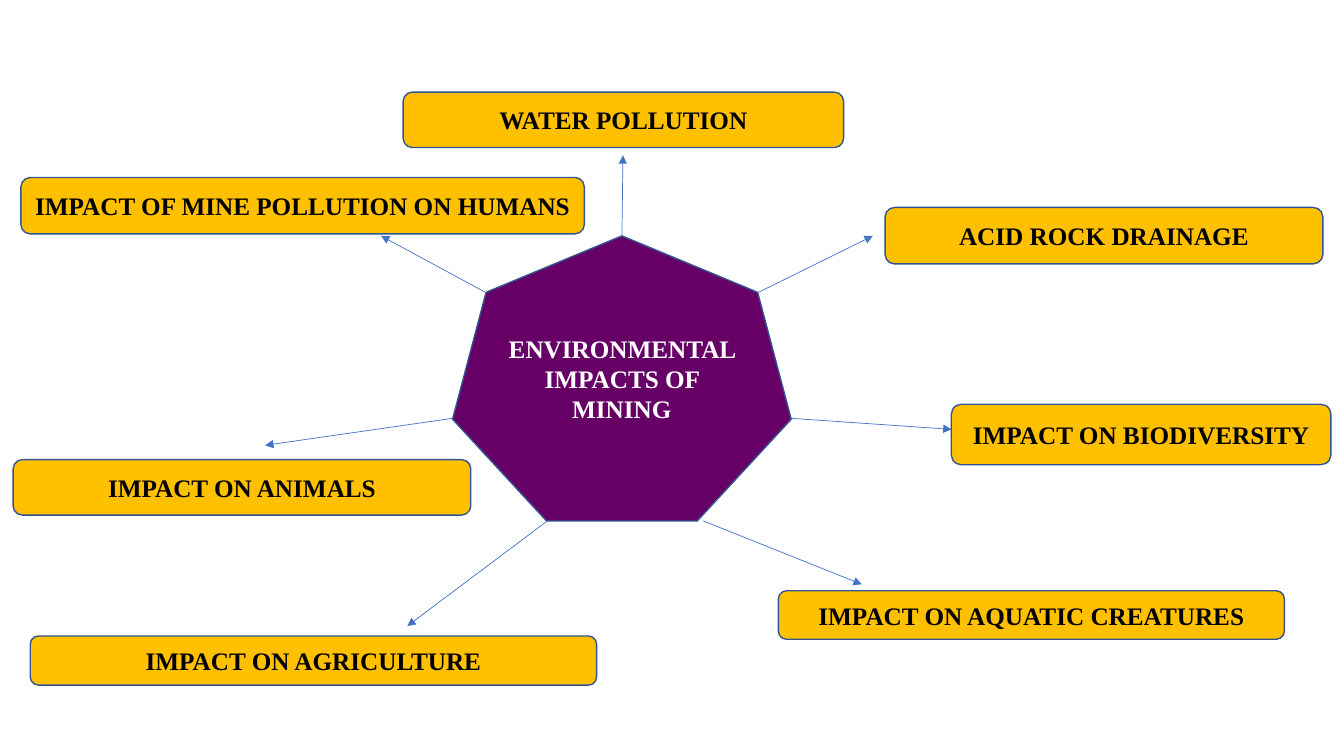
from lxml.etree import SubElement
from pptx import Presentation
from pptx.dml.color import RGBColor
from pptx.enum.shapes import MSO_CONNECTOR as Connector, MSO_SHAPE as Shape
from pptx.enum.text import MSO_ANCHOR as Anchor, PP_ALIGN as Align
from pptx.oxml.ns import qn
from pptx.util import Pt

COLORS = {
    "hub": "660066",
    "label": "FFC000",
    "outline": "325491",
    "arrow": "4472C4",
    "hub_text": "FFFFFF",
    "label_text": "000000",
}
FONT = "Times New Roman"
HUB_BOX = (323.3, 168.5, 241.9, 203.6)

# Each impact: wording, label box, arrow start as a share of the hub, arrow tip.
IMPACTS = [
    ("WATER POLLUTION", (288, 65.8, 314.6, 39.6), (0.5, 0), (445, 111)),
    ("ACID ROCK DRAINAGE", (632.2, 148.2, 312.7, 40.3), (0.9, 0.2), (623.5, 168.5)),
    ("IMPACT ON BIODIVERSITY", (679.5, 288.8, 271.2, 43.2), (1, 0.64), (679.7, 306.7)),
    ("IMPACT ON AQUATIC CREATURES", (556, 422, 361.4, 34.6), (0.74, 1), (615.6, 417.4)),
    ("IMPACT ON AGRICULTURE", (21.6, 454.3, 404.6, 35.1), (0.28, 1), (290.9, 447.2)),
    ("IMPACT ON ANIMALS", (9.4, 328.3, 326.9, 39.6), (0, 0.64), (189.4, 318.1)),
    ("IMPACT OF MINE POLLUTION ON HUMANS", (14.9, 126.8, 402.5, 40.3), (0.1, 0.2), (272.2, 168.5)),
]


def color(name):
    """Return the named palette colour."""
    return RGBColor.from_string(COLORS[name])


def add_topic(slide, outline, box, wording, role):
    """Place one filled shape with centred bold wording in its box."""
    topic = slide.shapes.add_shape(outline, *map(Pt, box))
    topic.shadow.inherit = False
    topic.fill.solid()
    topic.fill.fore_color.rgb = color(role)
    topic.line.color.rgb = color("outline")
    topic.line.width = Pt(1)
    frame = topic.text_frame
    frame.word_wrap = True
    frame.vertical_anchor = Anchor.MIDDLE
    paragraph = frame.paragraphs[0]
    paragraph.alignment = Align.CENTER
    run = paragraph.add_run()
    run.text = wording
    run.font.name = FONT
    run.font.size = Pt(18)
    run.font.bold = True
    run.font.color.rgb = color(f"{role}_text")


def add_spoke(slide, hub_box, share, tip):
    """Draw an arrow from a point on the hub to its tip."""
    left, top, width, height = hub_box
    start = (left + share[0] * width, top + share[1] * height)
    spoke = slide.shapes.add_connector(Connector.STRAIGHT, *map(Pt, start + tip))
    spoke.line.color.rgb = color("arrow")
    spoke.line.width = Pt(0.5)
    SubElement(spoke.line._get_or_add_ln(), qn("a:tailEnd"), type="triangle")
    SubElement(spoke._element.spPr, qn("a:effectLst"))


def add_impact_map(slide, hub_box):
    """Build the hub, its arrows and the labels around it."""
    add_topic(slide, Shape.HEPTAGON, hub_box, "ENVIRONMENTAL IMPACTS OF MINING", "hub")
    for _, _, share, tip in IMPACTS:
        add_spoke(slide, hub_box, share, tip)
    for wording, label_box, _, _ in IMPACTS:
        add_topic(slide, Shape.ROUNDED_RECTANGLE, label_box, wording, "label")


def main():
    """Create and save the one-slide presentation."""
    deck = Presentation()
    deck.slide_width, deck.slide_height = Pt(960), Pt(540)
    blank_layout = deck.slide_layouts[6]
    add_impact_map(deck.slides.add_slide(blank_layout), HUB_BOX)
    deck.save("out.pptx")


if __name__ == "__main__":
    main()
